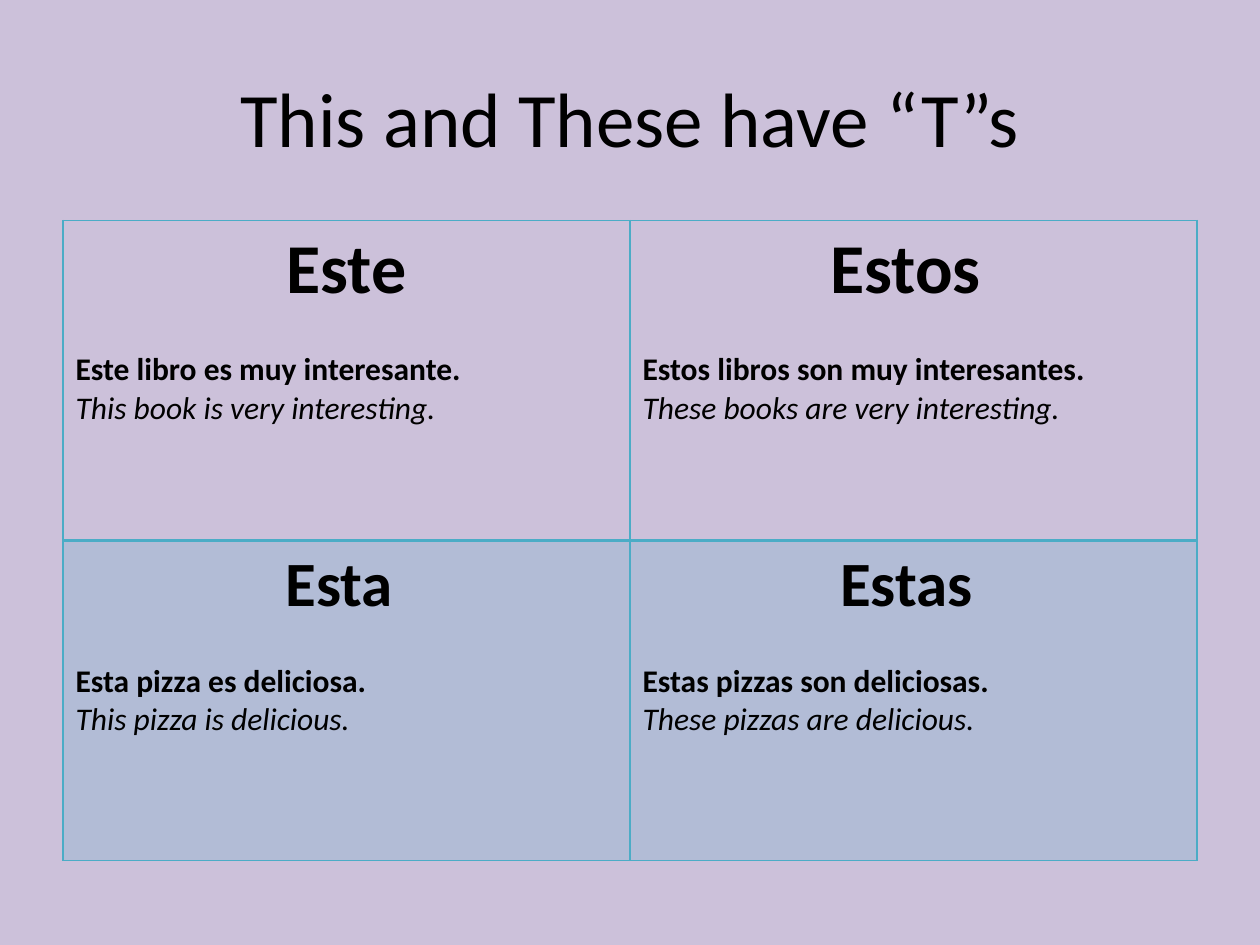
from lxml import etree
from pptx import Presentation
from pptx.dml.color import RGBColor
from pptx.enum.text import MSO_ANCHOR, PP_ALIGN
from pptx.oxml.ns import qn
from pptx.util import Inches, Pt

CENTER, LEFT = PP_ALIGN.CENTER, PP_ALIGN.LEFT
MIDDLE = MSO_ANCHOR.MIDDLE
LILAC = RGBColor(0xCC, 0xC1, 0xDA)
TEAL = RGBColor(0x4B, 0xAC, 0xC6)
BLACK = RGBColor(0, 0, 0)
COLUMNS, ROWS = 20, 150

DEMONSTRATIVES = [
    [
        ("Este", 40, "Este libro es muy interesante.", "This book is very interesting."),
        ("Estos ", 40, "Estos libros son muy interesantes.", "These books are very interesting."),
    ],
    [
        ("Esta ", 36, "Esta pizza es deliciosa.", "This pizza is delicious."),
        ("Estas ", 36, "Estas pizzas son deliciosas.", "These pizzas are delicious."),
    ],
]


class GrammarSlide:
    font = "Calibri"
    sentence_size = 18
    heading_gap = 22

    def __init__(self, deck):
        self.slide = deck.slides.add_slide(deck.slide_layouts[6])
        self.column = deck.slide_width / COLUMNS
        self.row = deck.slide_height / ROWS
        background = self.slide.background.fill
        background.solid()
        background.fore_color.rgb = LILAC

    def box(self, left, top, width, height):
        return (int(left * self.column), int(top * self.row),
                int(width * self.column), int(height * self.row))

    def add_words(self, paragraph, words, size, align=LEFT, bold=False, italic=False):
        paragraph.alignment = align
        run = paragraph.add_run()
        run.text = words
        run.font.name = self.font
        run.font.size = Pt(size)
        run.font.bold = bold
        run.font.italic = italic
        run.font.color.rgb = BLACK

    def title(self, words, *place):
        frame = self.slide.shapes.add_textbox(*self.box(*place)).text_frame
        frame.word_wrap = True
        frame.vertical_anchor = MIDDLE
        self.add_words(frame.paragraphs[0], words, 44, CENTER)

    def table(self, entries, *place):
        grid = self.slide.shapes.add_table(
            len(entries), len(entries[0]), *self.box(*place)).table
        grid.first_row = False
        grid.horz_banding = False
        for r, line in enumerate(entries):
            for c, entry in enumerate(line):
                cell = grid.cell(r, c)
                self.entry(cell.text_frame, *entry)
                self.tint(cell, shaded=r == 1)
                self.border(cell, top=1 + (r == 1), bottom=1 + (r == 0))

    def entry(self, frame, heading, size, spanish, english):
        top = frame.paragraphs[0]
        self.add_words(top, heading, size, CENTER, bold=True)
        top.space_after = Pt(self.heading_gap)
        self.add_words(frame.add_paragraph(), spanish, self.sentence_size, bold=True)
        self.add_words(frame.add_paragraph(), english, self.sentence_size, italic=True)

    def tint(self, cell, shaded):
        if not shaded:
            cell.fill.background()
            return
        cell.fill.solid()
        cell.fill.fore_color.rgb = TEAL
        color = cell._tc.tcPr.find(".//" + qn("a:srgbClr"))
        etree.SubElement(color, qn("a:alpha"), val="20000")

    def border(self, cell, top, bottom):
        properties = cell._tc.get_or_add_tcPr()
        sides = {"a:lnL": 1, "a:lnR": 1, "a:lnT": top, "a:lnB": bottom}
        for position, (side, width) in enumerate(sides.items()):
            edge = etree.Element(qn(side), w=str(int(Pt(width))))
            fill = etree.SubElement(edge, qn("a:solidFill"))
            etree.SubElement(fill, qn("a:srgbClr"), val=str(TEAL))
            properties.insert(position, edge)


def main():
    deck = Presentation()
    deck.slide_width, deck.slide_height = Inches(10), Inches(7.5)
    page = GrammarSlide(deck)
    page.title("This and These have “T”s", 1, 6, 18, 25)
    page.table(DEMONSTRATIVES, 1, 35, 18, 101.6)
    deck.save("out.pptx")


if __name__ == "__main__":
    main()
